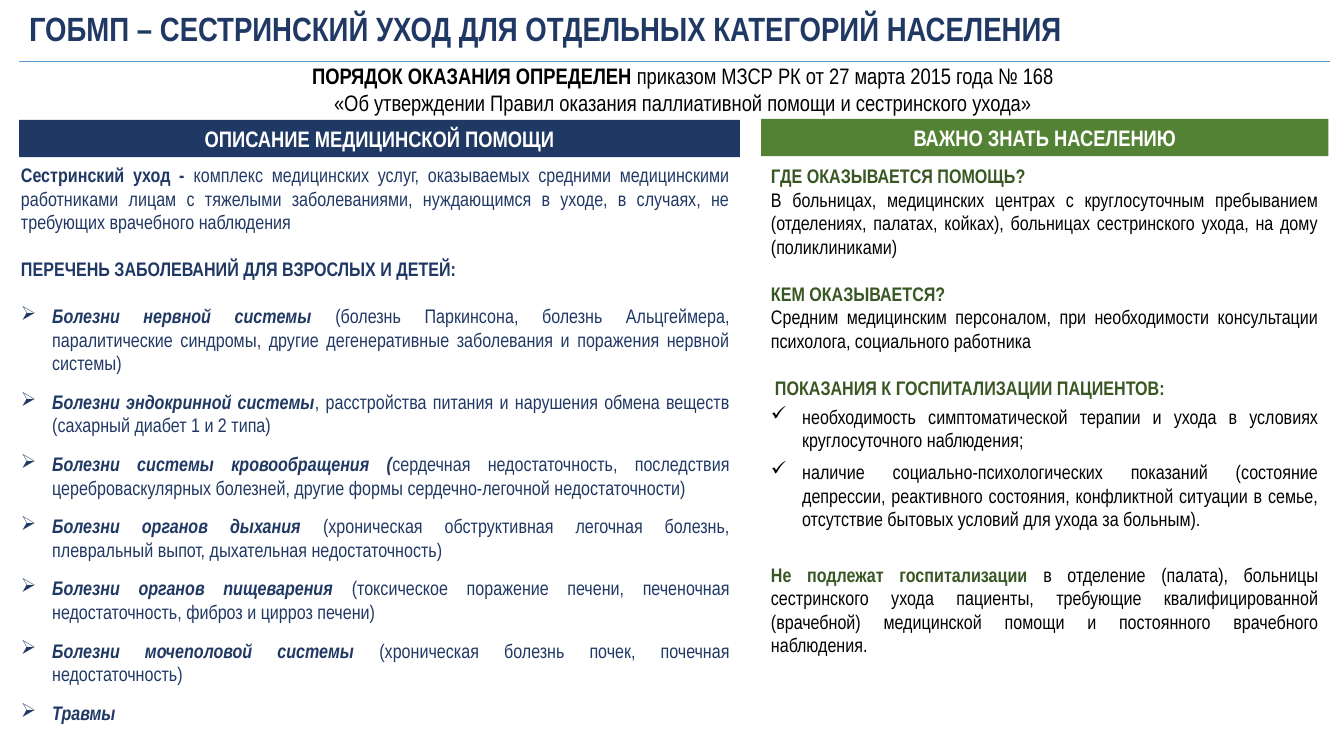
import pptx
import pptx.util
import pptx.dml.color
import pptx.enum.shapes
import pptx.enum.text
import pptx.oxml.ns
from lxml import etree

RGBColor = pptx.dml.color.RGBColor
NAVY = RGBColor(0x20, 0x38, 0x64)
GREEN = RGBColor(0x54, 0x82, 0x35)
DARK_GREEN = RGBColor(0x38, 0x57, 0x23)
BLUE = RGBColor(0x5B, 0x9B, 0xD5)
BLACK = RGBColor(0, 0, 0)
WHITE = RGBColor(0xFF, 0xFF, 0xFF)

ALIGN = pptx.enum.text.PP_ALIGN
ANCHOR = pptx.enum.text.MSO_ANCHOR
FONT = "Arial Narrow"
CELL = pptx.util.Inches(0.1)  # side of one grid cell
COLUMNS, ROWS = 133.33, 75
HEADER_ROWS = 3.7
INDENT = 3.1
LINE_GAP = 16.7  # one empty 14 pt line
ITEM_GAP = 10.8

# Each entry: space before, bullet, left indent, lead text, plain text
DISEASES = [
    ("Болезни нервной системы ", "(болезнь Паркинсона, болезнь Альцгеймера, паралитические синдромы, "
     "другие дегенеративные заболевания и поражения нервной системы)"),
    ("Болезни эндокринной системы", ", расстройства питания и нарушения обмена веществ "
     "(сахарный диабет 1 и 2 типа)"),
    ("Болезни системы кровообращения (", "сердечная недостаточность, последствия "
     "цереброваскулярных болезней, другие формы сердечно-легочной недостаточности)"),
    ("Болезни органов дыхания ", "(хроническая обструктивная легочная болезнь, "
     "плевральный выпот, дыхательная недостаточность)"),
    ("Болезни органов пищеварения ", "(токсическое поражение печени, печеночная "
     "недостаточность, фиброз и цирроз печени)"),
    ("Болезни мочеполовой системы ", "(хроническая болезнь почек, почечная недостаточность)"),
    ("Травмы", ""),
]
CARE = [
    (0, "", 0, "Сестринский уход - ", "комплекс медицинских услуг, оказываемых средними "
     "медицинскими работниками лицам с тяжелыми заболеваниями, нуждающимся в уходе, в случаях, "
     "не требующих врачебного наблюдения"),
    (LINE_GAP, "", 0, "ПЕРЕЧЕНЬ ЗАБОЛЕВАНИЙ ДЛЯ ВЗРОСЛЫХ И ДЕТЕЙ:", ""),
] + [(ITEM_GAP if number else LINE_GAP, "➢", INDENT, lead, plain)
     for number, (lead, plain) in enumerate(DISEASES)]
ADVICE = [
    (0, "", 0, "ГДЕ ОКАЗЫВАЕТСЯ ПОМОЩЬ?", ""),
    (0, "", 0, "", "В больницах, медицинских центрах с круглосуточным пребыванием (отделениях, "
     "палатах, койках), больницах сестринского ухода, на дому (поликлиниками)"),
    (LINE_GAP, "", 0, "КЕМ ОКАЗЫВАЕТСЯ?", ""),
    (0, "", 0, "", "Средним медицинским персоналом, при необходимости консультации психолога, "
     "социального работника"),
    (LINE_GAP, "", 0.4, "ПОКАЗАНИЯ К ГОСПИТАЛИЗАЦИИ ПАЦИЕНТОВ:", ""),
    (4, "", INDENT, "", "необходимость симптоматической терапии и ухода в условиях "
     "круглосуточного наблюдения;"),
    (6, "", INDENT, "", "наличие социально-психологических показаний (состояние депрессии, "
     "реактивного состояния, конфликтной ситуации в семье, отсутствие бытовых условий для ухода "
     "за больным)."),
    (LINE_GAP + 6, "", 0, "Не подлежат госпитализации ", "в отделение (палата), больницы "
     "сестринского ухода пациенты, требующие квалифицированной (врачебной) медицинской помощи и "
     "постоянного врачебного наблюдения."),
]
ADVICE = [(gap, "✓" if indent == INDENT else bullet, indent, lead, plain)
          for gap, bullet, indent, lead, plain in ADVICE]


def cells(*lengths):
    return [int(length * CELL) for length in lengths]


def add_text(paragraph, text, size=14, color=BLACK, bold=False, italic=False):
    run = paragraph.add_run()
    run.text = text
    run.font.name = FONT
    run.font.size = pptx.util.Pt(size)
    run.font.bold = bold
    run.font.italic = italic
    run.font.color.rgb = color


def add_frame(slide, box, anchor=ANCHOR.TOP):
    frame = slide.shapes.add_textbox(*cells(*box)).text_frame
    frame.word_wrap = True
    frame.vertical_anchor = anchor
    return frame


def next_paragraph(frame, number, alignment):
    paragraph = frame.add_paragraph() if number else frame.paragraphs[0]
    paragraph.alignment = alignment
    return paragraph


def set_indent(paragraph, indent, bullet):
    properties = paragraph._p.get_or_add_pPr()
    properties.set("marL", str(cells(indent)[0]))
    if bullet:
        properties.set("indent", str(-cells(indent)[0]))
        mark = etree.SubElement(properties, pptx.oxml.ns.qn("a:buChar"))
        mark.set("char", bullet)


def add_title(slide, box):
    left, top, width, height = box
    frame = add_frame(slide, (left, top, COLUMNS, height), ANCHOR.MIDDLE)
    paragraph = next_paragraph(frame, 0, ALIGN.LEFT)
    paragraph.line_spacing = 0.9
    add_text(paragraph, "ГОБМП – СЕСТРИНСКИЙ УХОД ДЛЯ ОТДЕЛЬНЫХ КАТЕГОРИЙ НАСЕЛЕНИЯ",
             size=24, color=NAVY, bold=True)
    # Rule under the title
    rule_top = top + height + 0.7
    rule = slide.shapes.add_connector(pptx.enum.shapes.MSO_CONNECTOR.STRAIGHT,
                                      *cells(left + width, rule_top, left, rule_top))
    rule.line.color.rgb = BLUE
    rule.line.width = pptx.util.Pt(0.5)
    etree.SubElement(rule._element.spPr, pptx.oxml.ns.qn("a:effectLst"))


def add_order(slide, box):
    frame = add_frame(slide, box)
    lines = [("ПОРЯДОК ОКАЗАНИЯ ОПРЕДЕЛЕН ", "приказом МЗСР РК от 27 марта 2015 года № 168"),
             ("", "«Об утверждении Правил оказания паллиативной помощи и сестринского ухода»")]
    for number, (lead, plain) in enumerate(lines):
        paragraph = next_paragraph(frame, number, ALIGN.CENTER)
        if lead:
            add_text(paragraph, lead, size=16, bold=True)
        add_text(paragraph, plain, size=16)


def add_panel(slide, box, heading, entries, fill, lead_color, plain_color, body_shift):
    left, top, width, height = box
    # Heading bar
    bar = slide.shapes.add_shape(pptx.enum.shapes.MSO_SHAPE.RECTANGLE,
                                 *cells(left, top, width, HEADER_ROWS))
    bar.shadow.inherit = False
    bar.fill.solid()
    bar.fill.fore_color.rgb = fill
    bar.line.fill.background()
    bar.text_frame.word_wrap = True
    add_text(next_paragraph(bar.text_frame, 0, ALIGN.CENTER), heading,
             size=16, color=WHITE, bold=True)
    # Body text
    shift_left, shift_down = body_shift
    body_top = HEADER_ROWS + shift_down
    frame = add_frame(slide, (left - shift_left, top + body_top,
                              width + shift_left, height - body_top))
    for number, (gap, bullet, indent, lead, plain) in enumerate(entries):
        paragraph = next_paragraph(frame, number, ALIGN.JUSTIFY)
        if gap:
            paragraph.space_before = pptx.util.Pt(gap)
        set_indent(paragraph, indent, bullet)
        if lead:
            add_text(paragraph, lead, color=lead_color, bold=True, italic=bool(bullet))
        if plain:
            add_text(paragraph, plain, color=plain_color)


def main():
    presentation = pptx.Presentation()
    presentation.slide_width, presentation.slide_height = cells(COLUMNS, ROWS)
    slide = presentation.slides.add_slide(presentation.slide_layouts[6])
    add_title(slide, (1.9, 0.7, 130, 4.7))
    add_panel(slide, (1.9, 11.9, 71.5, 62.5), "ОПИСАНИЕ МЕДИЦИНСКОЙ ПОМОЩИ", CARE,
              NAVY, NAVY, NAVY, (0.8, 0.1))
    add_panel(slide, (75.5, 11.8, 56.3, 56.7), "ВАЖНО ЗНАТЬ НАСЕЛЕНИЮ", ADVICE,
              GREEN, DARK_GREEN, BLACK, (0, 0.3))
    add_order(slide, (2.4, 5.7, 130.7, 6.4))
    presentation.save("out.pptx")


if __name__ == "__main__":
    main()
